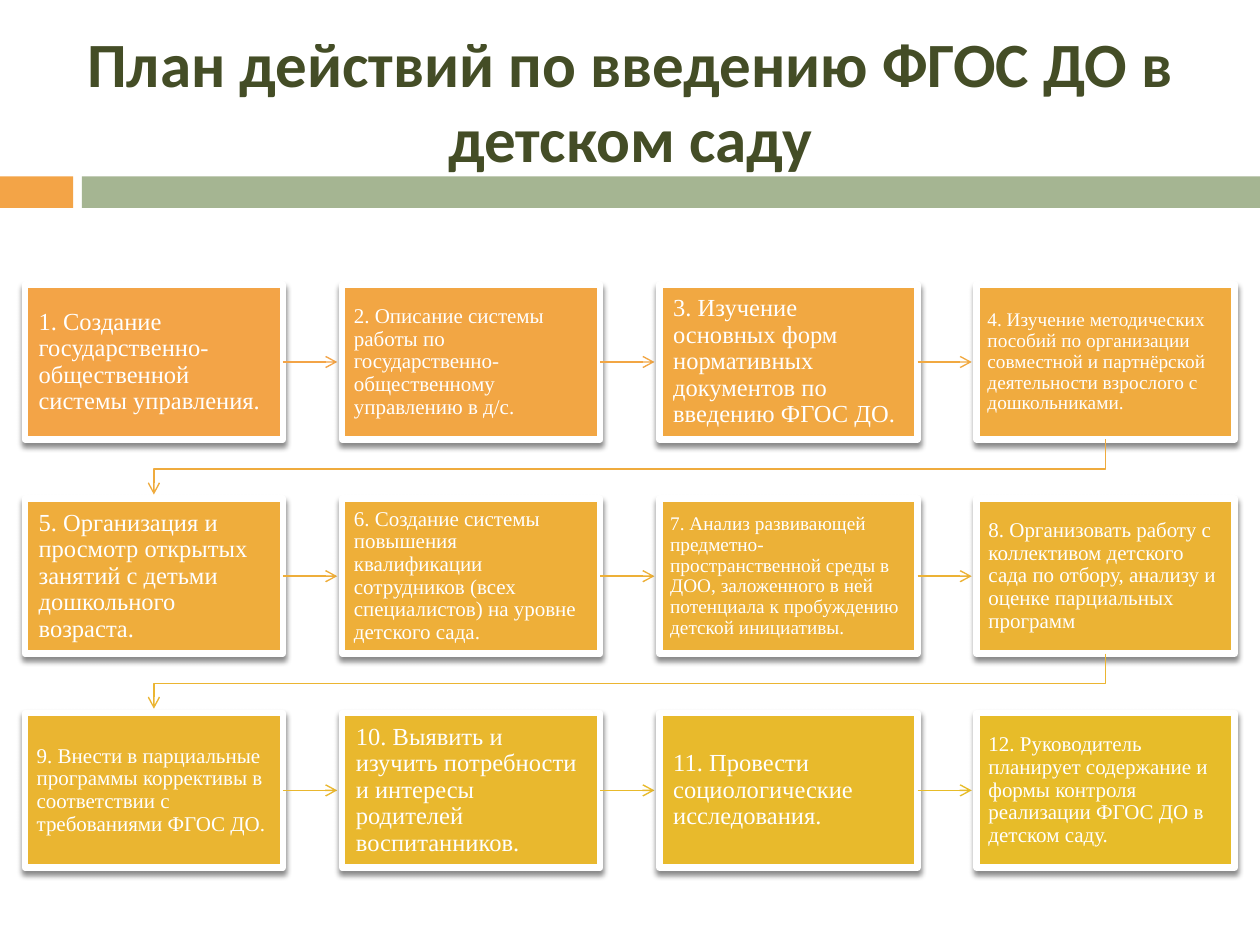
from lxml.etree import SubElement as Sub
from pptx import Presentation
from pptx.dml.color import RGBColor
from pptx.enum.shapes import MSO_CONNECTOR as LINK, MSO_SHAPE as SHAPE
from pptx.enum.text import MSO_ANCHOR as ANCHOR, MSO_AUTO_SIZE as FIT, PP_ALIGN as ALIGN
from pptx.oxml.ns import qn
from pptx.util import Pt

WHITE = RGBColor(0xFF, 0xFF, 0xFF)
GREEN = RGBColor(0xA5, 0xB5, 0x92)
OLIVE = RGBColor(0x44, 0x4D, 0x26)
ORANGE = RGBColor(0xF3, 0xA4, 0x47)
GOLD = RGBColor(0xE7, 0xBC, 0x29)

COLS = 4
LEFT, TOP = 14.2, 162.6
WIDE, HIGH = 147.5, 88.5
STEP_X, STEP_Y = 181.3, 122.4

# Text and font size of each step
STEPS = [
    ("1. Создание государственно-общественной системы управления.", 14),
    ("2. Описание системы работы по государственно-общественному управлению в д/с.", 12),
    ("3. Изучение основных форм нормативных документов по введению ФГОС ДО.", 14),
    ("4. Изучение методических пособий по организации совместной и партнёрской "
     "деятельности взрослого с дошкольниками.", 11),
    ("5. Организация и просмотр открытых занятий с детьми дошкольного возраста.", 14),
    ("6. Создание системы повышения квалификации сотрудников (всех специалистов) "
     "на уровне детского сада.", 12),
    ("7. Анализ развивающей предметно-пространственной среды в ДОО, заложенного "
     "в ней потенциала к пробуждению детской инициативы.", 11),
    ("8. Организовать работу с коллективом детского сада по отбору, анализу "
     "и оценке парциальных программ", 12),
    ("9. Внести в парциальные программы коррективы в соответствии "
     "с требованиями ФГОС ДО.", 12),
    ("10. Выявить и изучить потребности и интересы родителей воспитанников.", 14),
    ("11. Провести социологические исследования.", 14),
    ("12. Руководитель планирует содержание и формы контроля реализации "
     "ФГОС ДО в детском саду.", 12),
]


def blend(part):
    """Colour at the given part of the way from orange to gold."""
    return RGBColor(*(round(a + (b - a) * part) for a, b in zip(ORANGE, GOLD)))


def style(arrow, color):
    """Give a line its colour, width and arrowhead."""
    arrow.line.color.rgb = color
    arrow.line.width = Pt(0.79)
    Sub(arrow.line._get_or_add_ln(), qn("a:tailEnd"), type="arrow")


deck = Presentation()
deck.slide_width, deck.slide_height = Pt(720), Pt(540)
slide = deck.slides.add_slide(deck.slide_layouts[5])
shapes = slide.shapes

# Band under the title
for left, width, color in [(0, 41.8, ORANGE), (46.8, 673.2, GREEN)]:
    bar = shapes.add_shape(SHAPE.RECTANGLE, Pt(left), Pt(100.8), Pt(width), Pt(18))
    bar.shadow.inherit = False
    bar.fill.solid()
    bar.fill.fore_color.rgb = color
    bar.line.fill.background()

title = shapes.title
title.left, title.top, title.width, title.height = Pt(14.2), Pt(18), Pt(692), Pt(78)
frame = title.text_frame
frame.text = "План действий по введению ФГОС ДО в детском саду"
frame.auto_size = FIT.NONE
frame.vertical_anchor = ANCHOR.MIDDLE
para = frame.paragraphs[0]
para.alignment = ALIGN.CENTER
for key, value in {"name": "Calibri", "size": Pt(36), "bold": True}.items():
    setattr(para.runs[0].font, key, value)
para.runs[0].font.color.rgb = OLIVE

# Step boxes, each with an arrow to the next one
last = len(STEPS) - 1
for i, (text, size) in enumerate(STEPS):
    row, col = divmod(i, COLS)
    x, y = LEFT + col * STEP_X, TOP + row * STEP_Y
    box = shapes.add_shape(SHAPE.RECTANGLE, Pt(x), Pt(y), Pt(WIDE), Pt(HIGH))
    box.fill.solid()
    box.fill.fore_color.rgb = blend(i / last)
    box.line.color.rgb = WHITE
    box.line.width = Pt(3.75)
    box.shadow.inherit = False
    glow = box._element.spPr.find(qn("a:effectLst"))
    shade = Sub(glow, qn("a:outerShdw"), blurRad=str(Pt(3)), dist=str(Pt(2.4)),
                dir="5400000", rotWithShape="0")
    black = Sub(shade, qn("a:srgbClr"), val="000000")
    Sub(black, qn("a:alpha"), val="45000")

    frame = box.text_frame
    pad = Pt(round(size * 0.56, 2))
    look = {"word_wrap": True, "vertical_anchor": ANCHOR.MIDDLE, "margin_left": pad,
            "margin_right": pad, "margin_top": pad, "margin_bottom": pad}
    for key, value in look.items():
        setattr(frame, key, value)
    frame.text = text
    para = frame.paragraphs[0]
    para.alignment = ALIGN.LEFT
    para.line_spacing = 0.9
    font = para.runs[0].font
    font.name, font.size = "Times New Roman", Pt(size)
    font.color.rgb = WHITE

    if i == last:
        break
    color = blend(i / (last - 1))
    if col < COLS - 1:
        mid = Pt(y + HIGH / 2)
        arrow = shapes.add_connector(LINK.STRAIGHT, Pt(x + WIDE), mid,
                                     Pt(x + STEP_X - 2.8), mid)
        arrow.begin_connect(box, 3)
        style(arrow, color)
        Sub(arrow._element.spPr, qn("a:effectLst"))
    else:
        start, end = Pt(x + WIDE / 2), Pt(LEFT + WIDE / 2)
        base, turn, tip = Pt(y + HIGH), Pt(y + HIGH + 17), Pt(y + STEP_Y - 2.4)
        pen = shapes.build_freeform(start, base)
        pen.add_line_segments([(start, turn), (end, turn), (end, tip)], close=False)
        arrow = pen.convert_to_shape()
        arrow.fill.background()
        style(arrow, color)
        arrow.shadow.inherit = False

deck.save("out.pptx")
